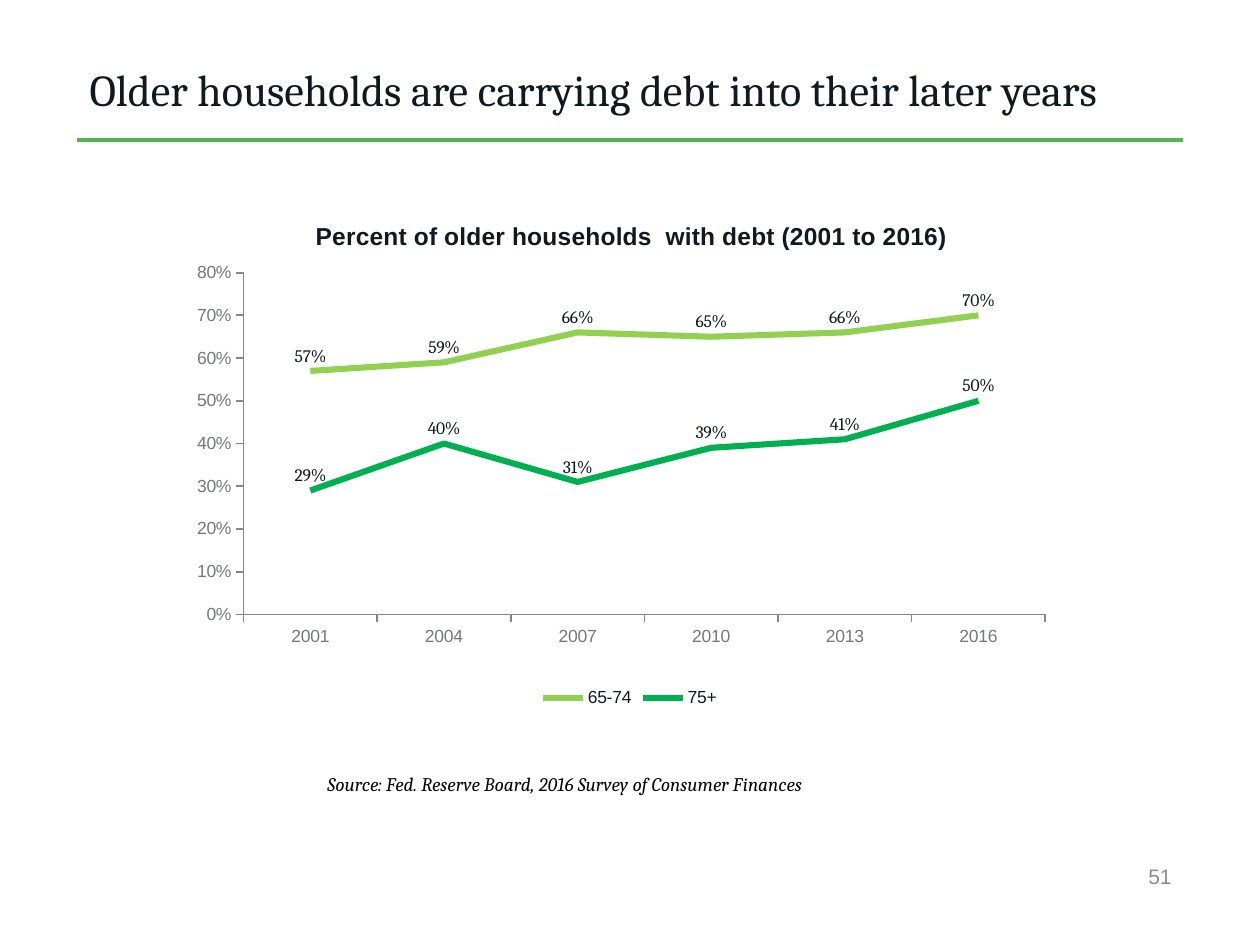
from dataclasses import dataclass

from lxml.etree import SubElement
from pptx import Presentation
from pptx.chart.data import CategoryChartData
from pptx.dml.color import RGBColor
from pptx.enum.chart import XL_CHART_TYPE, XL_LABEL_POSITION, XL_LEGEND_POSITION, XL_TICK_MARK
from pptx.enum.shapes import MSO_CONNECTOR
from pptx.enum.text import MSO_ANCHOR, PP_ALIGN
from pptx.oxml import parse_xml
from pptx.oxml.ns import nsdecls, qn
from pptx.util import Emu, Pt

PIXELS_PER_INCH = 126


@dataclass(frozen=True)
class Theme:
    serif: str = "Cambria"
    sans: str = "Arial"
    ink: str = "101820"
    source: str = "050606"
    axis_text: str = "75787B"
    axis_line: str = "868686"
    page_number: str = "8C8C8D"
    rule: str = "50B748"
    title_size: float = 25.2
    chart_title_size: float = 14
    page_number_size: float = 12
    source_size: float = 11
    chart_size: float = 10


@dataclass(frozen=True)
class Box:
    left: int
    top: int
    width: int
    height: int

    def lengths(self) -> tuple:
        return tuple(px(n) for n in (self.left, self.top, self.width, self.height))


@dataclass(frozen=True)
class AgeGroup:
    name: str
    shares: tuple
    color: str


THEME = Theme()
YEARS = ("2001", "2004", "2007", "2010", "2013", "2016")
AGE_GROUPS = (
    AgeGroup("65-74", (0.57, 0.59, 0.66, 0.65, 0.66, 0.70), "92D050"),
    AgeGroup("75+", (0.29, 0.40, 0.31, 0.39, 0.41, 0.50), "00B050"),
)


def px(count: int) -> Emu:
    return Emu(round(count * 914400 / PIXELS_PER_INCH))


def style_font(font, name: str, size: float, color: str, bold: bool = False, italic: bool = False) -> None:
    font.name, font.size = name, Pt(size)
    font.bold, font.italic = bold, italic
    font.color.rgb = RGBColor.from_string(color)


def style_line(line, color: str, width: float) -> None:
    line.color.rgb = RGBColor.from_string(color)
    line.width = Pt(width)


def add_label(slide, box: Box, text: str, size: float, color: str, name: str,
              align=PP_ALIGN.LEFT, anchor=MSO_ANCHOR.TOP, italic: bool = False) -> None:
    frame = slide.shapes.add_textbox(*box.lengths()).text_frame
    frame.word_wrap = True
    frame.vertical_anchor = anchor
    frame.text = text
    paragraph = frame.paragraphs[0]
    paragraph.alignment = align
    style_font(paragraph.runs[0].font, name, size, color, italic=italic)


def set_layout(element, index: int, **fractions: float) -> None:
    """Give a chart part a manual layout in fractions of the chart."""
    for old in element.findall(qn("c:layout")):
        element.remove(old)
    layout = parse_xml(f"<c:layout {nsdecls('c')}><c:manualLayout/></c:layout>")
    manual = layout[0]
    if "w" in fractions:
        SubElement(manual, qn("c:layoutTarget")).set("val", "inner")
    for mode in ("xMode", "yMode"):
        SubElement(manual, qn(f"c:{mode}")).set("val", "edge")
    for key, value in fractions.items():
        SubElement(manual, qn(f"c:{key}")).set("val", str(value))
    element.insert(index, layout)


def add_title(slide, box: Box, text: str) -> None:
    title = slide.shapes.title
    title.left, title.top, title.width, title.height = box.lengths()
    frame = title.text_frame
    frame.text = text
    frame.vertical_anchor = MSO_ANCHOR.MIDDLE
    frame.paragraphs[0].alignment = PP_ALIGN.LEFT
    style_font(frame.paragraphs[0].runs[0].font, THEME.serif, THEME.title_size, THEME.ink)


def add_rule(slide, left: int, right: int, y: int) -> None:
    rule = slide.shapes.add_connector(MSO_CONNECTOR.STRAIGHT, px(left), px(y), px(right), px(y))
    style_line(rule.line, THEME.rule, 2)
    SubElement(rule._element.spPr, qn("a:effectLst"))


def style_axis(axis) -> None:
    axis.has_major_gridlines = False
    axis.major_tick_mark = XL_TICK_MARK.OUTSIDE
    axis.minor_tick_mark = XL_TICK_MARK.NONE
    style_line(axis.format.line, THEME.axis_line, 1)
    style_font(axis.tick_labels.font, THEME.sans, THEME.chart_size, THEME.axis_text)


def add_debt_chart(slide, box: Box, title: str) -> None:
    data = CategoryChartData(number_format="0%")
    data.categories = YEARS
    for group in AGE_GROUPS:
        data.add_series(group.name, group.shares)
    chart = slide.shapes.add_chart(XL_CHART_TYPE.LINE, *box.lengths(), data).chart
    style_font(chart.font, THEME.serif, THEME.chart_size, THEME.ink)

    # Chart title
    chart.has_title = True
    frame = chart.chart_title.text_frame
    frame.text = title
    style_font(frame.paragraphs[0].runs[0].font, THEME.sans, THEME.chart_title_size, THEME.ink, bold=True)
    title_element = chart.chart_title._element
    set_layout(title_element, 1, x=0.17, y=0.04)
    title_element.find(qn("c:overlay")).set("val", "1")

    # Axes, plot area and legend
    style_axis(chart.category_axis)
    style_axis(chart.value_axis)
    chart.value_axis.minimum_scale = 0
    chart.value_axis.maximum_scale = 0.8
    chart.value_axis.major_unit = 0.1
    chart.value_axis.tick_labels.number_format = "0%"
    chart.value_axis.tick_labels.number_format_is_linked = False
    set_layout(chart._chartSpace.chart.plotArea, 0, x=0.1, y=0.15, w=0.83, h=0.66)
    chart.has_legend = True
    chart.legend.position = XL_LEGEND_POSITION.BOTTOM
    chart.legend.include_in_layout = False
    style_font(chart.legend.font, THEME.sans, THEME.chart_size, THEME.ink)

    # Lines and their value labels
    for series, group in zip(chart.plots[0].series, AGE_GROUPS):
        series.smooth = False
        style_line(series.format.line, group.color, 3.5)
        labels = series.data_labels
        labels.show_value = True
        labels.position = XL_LABEL_POSITION.ABOVE
        labels.number_format = "0%"
        labels.number_format_is_linked = False
        style_font(labels.font, THEME.serif, THEME.chart_size, THEME.ink)


def main() -> None:
    presentation = Presentation()
    presentation.slide_width, presentation.slide_height = px(1260), px(945)
    slide = presentation.slides.add_slide(presentation.slide_layouts[5])

    # Heading
    add_rule(slide, 77, 1183, 140)
    add_title(slide, Box(77, 38, 1108, 102), "Older households are carrying debt into their later years")

    # Chart and its source
    add_debt_chart(slide, Box(147, 195, 966, 518), "Percent of older households  with debt (2001 to 2016)")
    add_label(slide, Box(315, 766, 630, 37), "Source: Fed. Reserve Board, 2016 Survey of Consumer Finances",
              THEME.source_size, THEME.source, THEME.serif, italic=True)

    # Page number
    add_label(slide, Box(785, 851, 399, 50), "51", THEME.page_number_size, THEME.page_number,
              THEME.sans, PP_ALIGN.RIGHT, MSO_ANCHOR.MIDDLE)
    presentation.save("out.pptx")


if __name__ == "__main__":
    main()
